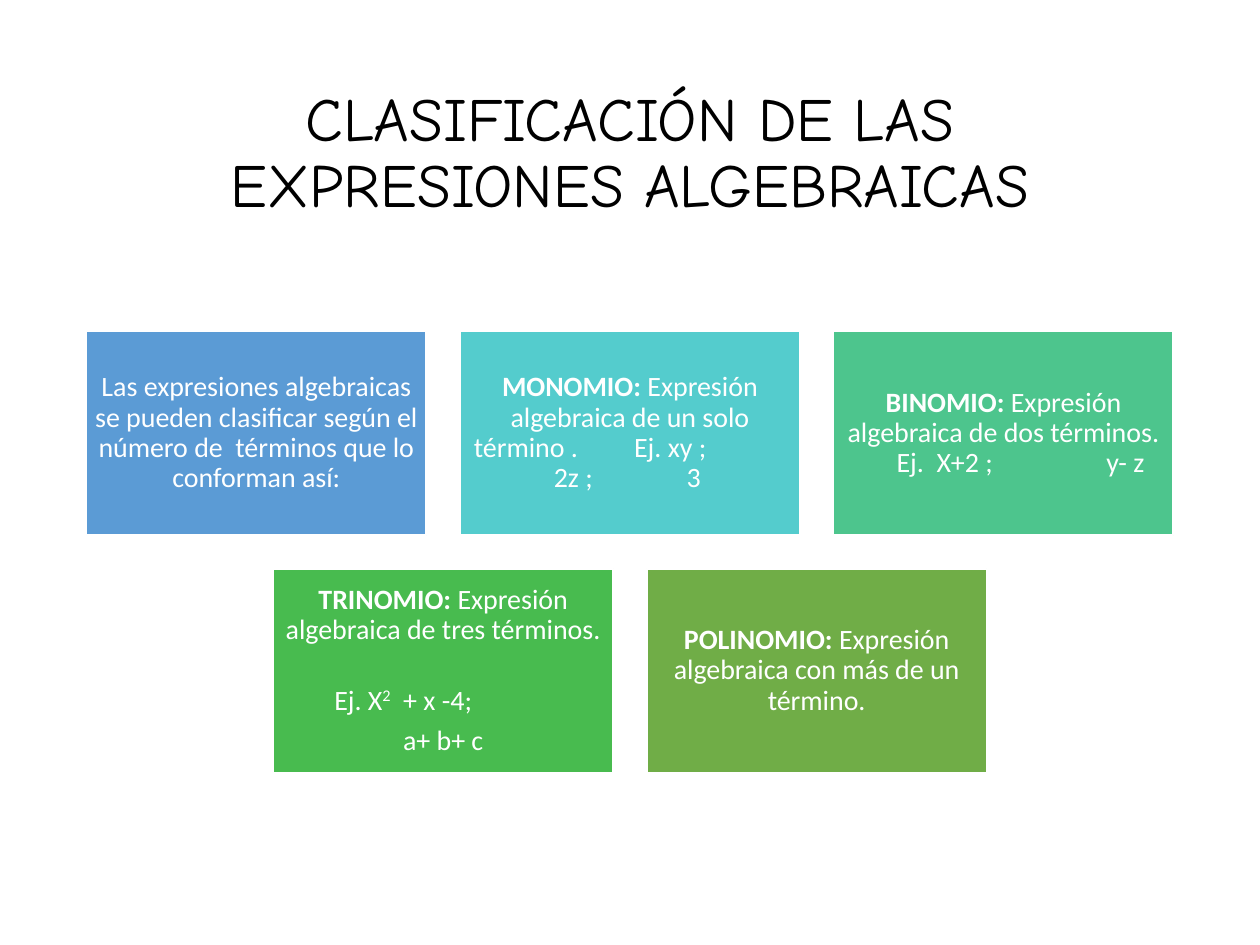
from dataclasses import dataclass
from lxml.etree import SubElement
from pptx import Presentation
from pptx.dml.color import RGBColor as Rgb
from pptx.enum.shapes import MSO_SHAPE as Preset
from pptx.enum.text import MSO_ANCHOR as Anchor, MSO_AUTO_SIZE as AutoSize, PP_ALIGN as Align
from pptx.oxml.ns import qn
from pptx.util import Cm, Pt


@dataclass(frozen=True)
class Theme:
    title_font: str = "Comic Neue"
    body_font: str = "Calibri"
    title_size: int = 35
    body_size: int = 16
    ink: str = "000000"
    paper: str = "FFFFFF"
    line_spacing: float = 0.9
    paragraph_gap: float = 5.6
    cards: tuple = ("5B9BD5", "54CCCD", "4DC58D", "48BB4F", "70AD47")


@dataclass(frozen=True)
class Line:
    runs: tuple
    tabs: tuple = ()
    gap: float = 0


THEME = Theme()
SLIDE_WIDTH, SLIDE_HEIGHT = 25.4, 19.05
CARD_WIDTH, CARD_HEIGHT, CARD_GAP = 6.85, 4.11, 0.68
CARDS_TOP = 6.68
CARDS_PER_ROW = 3

DEFINITIONS = (
    (Line((("Las expresiones algebraicas se pueden clasificar según el "
            "número de  términos que lo conforman así:", ""),)),),
    (Line((("MONOMIO:", "bold"), (" Expresión algebraica de un solo", ""))),
     Line((("\ttérmino .\tEj. xy ;", ""),), (0.12, 3.35)),
     Line((("\t2z ;\t3", ""),), (1.73, 4.41))),
    (Line((("BINOMIO:", "bold"), (" Expresión algebraica de dos términos.", ""))),
     Line((("\tEj.  X+2 ;\ty- z", ""),), (1.11, 5.34))),
    (Line((("TRINOMIO:", "bold"), (" Expresión algebraica de tres términos.", "")), gap=23),
     Line((("\tEj. X", ""), ("2", "super"), ("  + x -4;", "")), (1.07,), THEME.paragraph_gap),
     Line((("a+ b+ c", ""),))),
    (Line((("POLINOMIO:", "bold"), (" Expresión algebraica con más de un término.", ""))),),
)


def add_run(paragraph, wording, font_name, size, color, style=""):
    run = paragraph.add_run()
    run.text = wording
    run.font.name = font_name
    run.font.size = Pt(size)
    run.font.color.rgb = Rgb.from_string(color)
    run.font.bold = style == "bold"
    if style == "super":
        run.font._element.set("baseline", "30000")


def set_tabs(paragraph, positions):
    stops = SubElement(paragraph._p.get_or_add_pPr(), qn("a:tabLst"))
    for position in positions:
        SubElement(stops, qn("a:tab"), pos=str(Cm(position)), algn="l")


def write_line(paragraph, line):
    paragraph.alignment = Align.LEFT if line.tabs else Align.CENTER
    paragraph.line_spacing = THEME.line_spacing
    paragraph.space_after = Pt(line.gap)
    if line.tabs:
        set_tabs(paragraph, line.tabs)
    for wording, style in line.runs:
        add_run(paragraph, wording, THEME.body_font, THEME.body_size, THEME.paper, style)


def add_title(slide, wording):
    title = slide.shapes.title
    title.left, title.top, title.width, title.height = Cm(1.75), Cm(1.55), Cm(21.9), Cm(3.15)
    frame = title.text_frame
    frame.word_wrap = True
    frame.auto_size = AutoSize.NONE
    frame.vertical_anchor = Anchor.MIDDLE
    heading = frame.paragraphs[0]
    heading.alignment = Align.CENTER
    heading.line_spacing = THEME.line_spacing
    add_run(heading, wording, THEME.title_font, THEME.title_size, THEME.ink)


def add_card(slide, left, top, color, lines):
    card = slide.shapes.add_shape(Preset.RECTANGLE, Cm(left), Cm(top), Cm(CARD_WIDTH), Cm(CARD_HEIGHT))
    card.shadow.inherit = False
    card.fill.solid()
    card.fill.fore_color.rgb = Rgb.from_string(color)
    card.line.color.rgb = Rgb.from_string(THEME.paper)
    card.line.width = Pt(1)
    frame = card.text_frame
    frame.word_wrap = True
    frame.vertical_anchor = Anchor.MIDDLE
    frame.margin_left = frame.margin_right = frame.margin_top = frame.margin_bottom = Cm(0.16)
    for index, line in enumerate(lines):
        write_line(frame.add_paragraph() if index else frame.paragraphs[0], line)


def add_cards(slide):
    cards = list(zip(THEME.cards, DEFINITIONS))
    for start in range(0, len(cards), CARDS_PER_ROW):
        row = cards[start:start + CARDS_PER_ROW]
        row_width = len(row) * (CARD_WIDTH + CARD_GAP) - CARD_GAP
        row_left = (SLIDE_WIDTH - row_width) / 2
        top = CARDS_TOP + start // CARDS_PER_ROW * (CARD_HEIGHT + CARD_GAP)
        for column, (color, lines) in enumerate(row):
            add_card(slide, row_left + column * (CARD_WIDTH + CARD_GAP), top, color, lines)


def main():
    deck = Presentation()
    deck.slide_width, deck.slide_height = Cm(SLIDE_WIDTH), Cm(SLIDE_HEIGHT)
    slide = deck.slides.add_slide(deck.slide_layouts.get_by_name("Title Only"))
    add_title(slide, "CLASIFICACIÓN DE LAS EXPRESIONES ALGEBRAICAS")
    add_cards(slide)
    deck.save("out.pptx")


if __name__ == "__main__":
    main()
